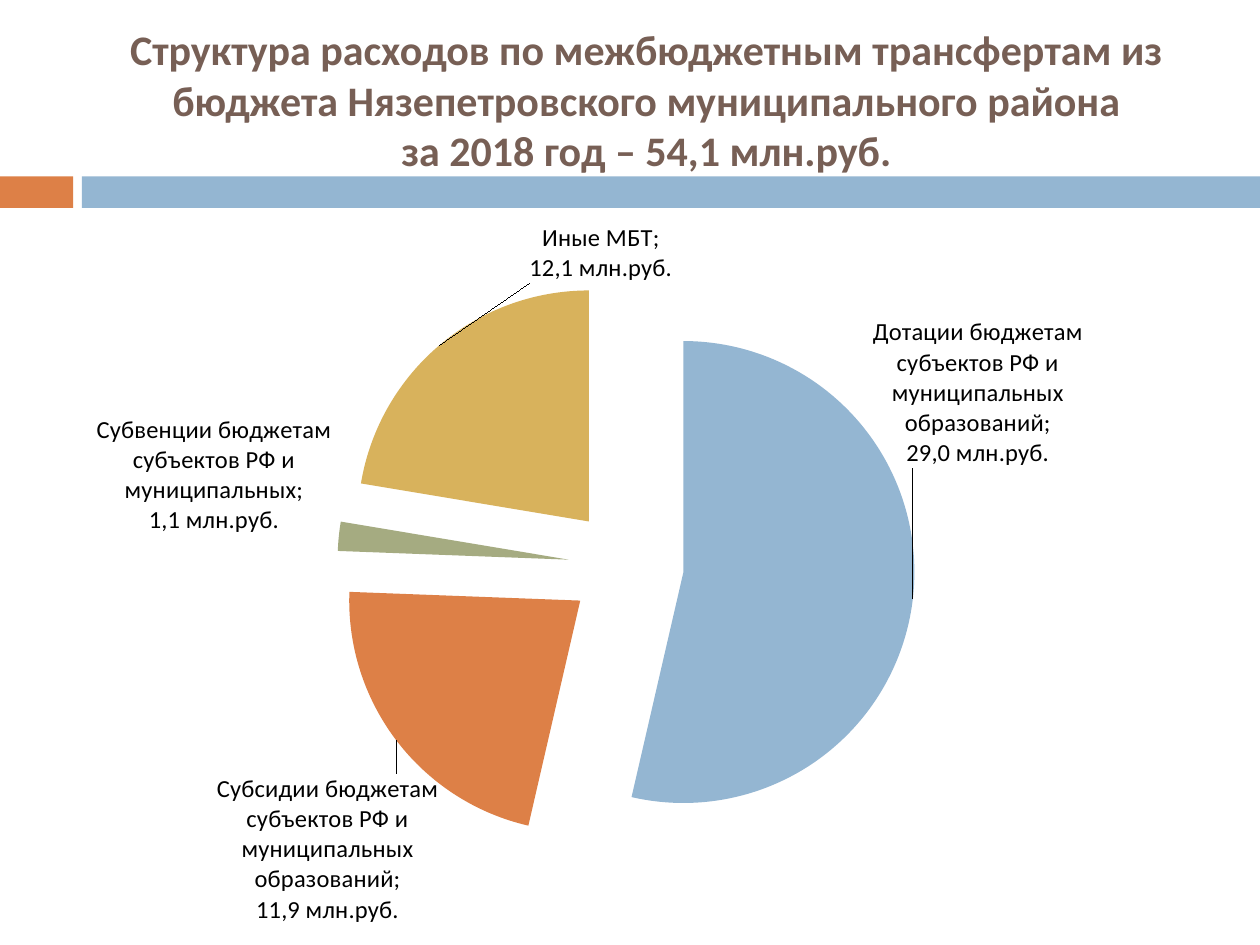
import pptx
import pptx.chart.data
import pptx.dml.color
import pptx.enum.chart
import pptx.enum.shapes
import pptx.enum.text
import pptx.oxml
import pptx.oxml.ns
import pptx.util
from pptx.util import Inches

RGBColor = pptx.dml.color.RGBColor
BLUE = RGBColor(0x94, 0xB6, 0xD2)
ORANGE = RGBColor(0xDD, 0x80, 0x47)
GREEN = RGBColor(0xA5, 0xAB, 0x81)
GOLD = RGBColor(0xD8, 0xB2, 0x5C)
BROWN = RGBColor(0x77, 0x5F, 0x55)
BLACK = RGBColor(0, 0, 0)

TITLE = ("Структура расходов по межбюджетным трансфертам из "
         "бюджета Нязепетровского муниципального района\v"
         "за 2018 год – 54,1 млн.руб.")
TITLE_FONT = {"name": "Calibri", "size": pptx.util.Pt(24), "bold": True}
LABEL_FONT = {"name": "Calibri", "size": pptx.util.Pt(14), "bold": False}

# left, width, colour
BANDS = [(0, 0.58, ORANGE), (0.65, 9.35, BLUE)]
BAND_TOP, BAND_HEIGHT = 1.4, 0.25

# category, value, colour, label shift as a share of the chart size
TRANSFERS = [
    ("Дотации бюджетам субъектов РФ и муниципальных образований", 29.0, BLUE, (-0.04, -0.4)),
    ("Субсидии бюджетам субъектов РФ и муниципальных образований", 11.9, ORANGE, (0.04, 0.04)),
    ("Субвенции бюджетам субъектов РФ и муниципальных", 1.1, GREEN, None),
    ("Иные МБТ", 12.1, GOLD, (0.2, -0.08)),
]
PLOT_AREA = {"x": 0.09, "y": 0.08, "w": 0.84, "h": 0.82}
EXPLOSION = 25


def format_font(font, values, colour):
    for name, value in values.items():
        setattr(font, name, value)
    font.color.rgb = colour


def chart_xml(body):
    return pptx.oxml.parse_xml(body.replace(
        ">", f" {pptx.oxml.ns.nsdecls('c')}>", 1))


def manual_layout(values, modes=""):
    parts = "".join(f'<c:{name} val="{value}"/>' for name, value in values.items())
    return chart_xml(f"<c:layout><c:manualLayout>{modes}{parts}</c:manualLayout></c:layout>")


def add_title(page):
    title = page.shapes.title
    title.left, title.top, title.width, title.height = map(Inches, (0.67, 0.25, 8.92, 1.08))
    frame = title.text_frame
    frame.text = TITLE
    frame.word_wrap = True
    frame.auto_size = pptx.enum.text.MSO_AUTO_SIZE.NONE
    frame.vertical_anchor = pptx.enum.text.MSO_ANCHOR.MIDDLE
    para = frame.paragraphs[0]
    para.alignment = pptx.enum.text.PP_ALIGN.CENTER
    for span in para.runs:
        format_font(span.font, TITLE_FONT, BROWN)


def add_bands(page):
    for left, width, colour in BANDS:
        band = page.shapes.add_shape(
            pptx.enum.shapes.MSO_SHAPE.RECTANGLE,
            *map(Inches, (left, BAND_TOP, width, BAND_HEIGHT)))
        band.shadow.inherit = False
        band.fill.solid()
        band.fill.fore_color.rgb = colour
        band.line.fill.background()


def format_slice(series, index, category, value, colour, shift):
    point = series.points[index]
    point.format.fill.solid()
    point.format.fill.fore_color.rgb = colour
    label = point.data_label
    amount = f"{value:.1f}".replace(".", ",")
    label.text_frame.text = f"{category};\n{amount} млн.руб."
    for para in label.text_frame.paragraphs:
        for span in para.runs:
            format_font(span.font, LABEL_FONT, BLACK)
    label.position = pptx.enum.chart.XL_LABEL_POSITION.OUTSIDE_END
    if shift:
        element = series._element.xpath(f"c:dLbls/c:dLbl[c:idx/@val='{index}']")[0]
        element.insert(1, manual_layout(dict(zip("xy", shift))))


def add_pie(page):
    data = pptx.chart.data.CategoryChartData(number_format="0.0")
    data.categories = [row[0] for row in TRANSFERS]
    data.add_series("Series 1", [row[1] for row in TRANSFERS])
    chart = page.shapes.add_chart(
        pptx.enum.chart.XL_CHART_TYPE.PIE,
        *map(Inches, (0.16, 1.75, 9.43, 5.59)), data).chart
    chart.has_title = chart.has_legend = False
    format_font(chart.font, {"name": "Calibri", "size": pptx.util.Pt(18)}, BLACK)
    plot = chart.plots[0]
    plot.vary_by_categories = True

    series = plot.series[0]
    labels = series.data_labels
    labels.show_value = labels.show_category_name = True
    labels.number_format, labels.number_format_is_linked = "0.0", False
    labels.position = pptx.enum.chart.XL_LABEL_POSITION.OUTSIDE_END
    format_font(labels.font, LABEL_FONT, BLACK)
    for index, row in enumerate(TRANSFERS):
        format_slice(series, index, *row)
    series._element.xpath("c:dPt")[0].addprevious(
        chart_xml(f'<c:explosion val="{EXPLOSION}"></c:explosion>'))

    area = chart._chartSpace.xpath("c:chart/c:plotArea")[0]
    for old in area.xpath("c:layout"):
        area.remove(old)
    modes = ('<c:layoutTarget val="inner"/>'
             '<c:xMode val="edge"/><c:yMode val="edge"/>')
    area.insert(0, manual_layout(PLOT_AREA, modes))


def main():
    deck = pptx.Presentation()
    deck.slide_width, deck.slide_height = Inches(10), Inches(7.5)
    page = deck.slides.add_slide(deck.slide_layouts.get_by_name("Title Only"))
    add_bands(page)
    add_title(page)
    add_pie(page)
    deck.save("out.pptx")


if __name__ == "__main__":
    main()
